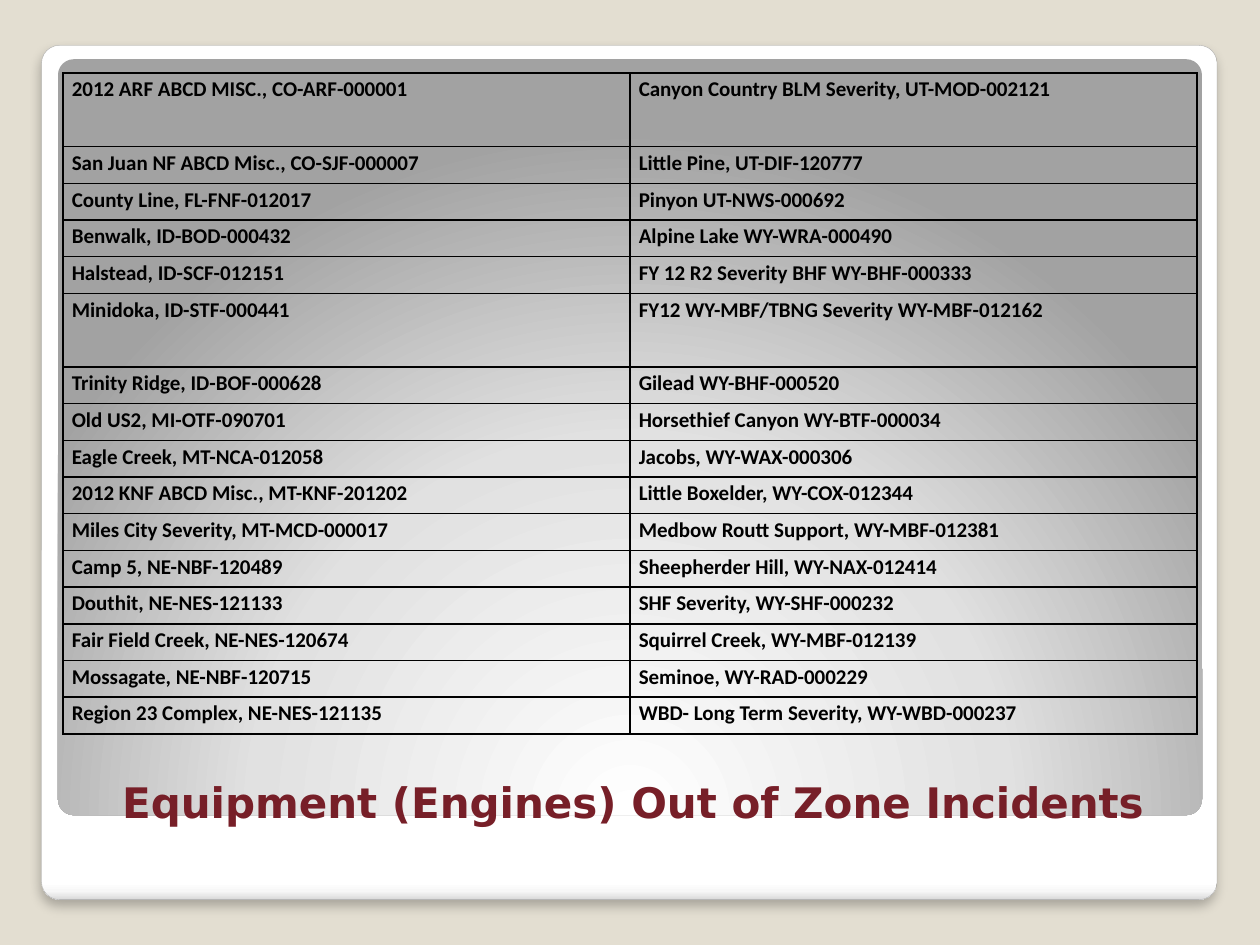
import lxml.etree
import pptx
import pptx.dml.color
import pptx.enum.shapes
import pptx.enum.text
import pptx.oxml
import pptx.oxml.ns
import pptx.util

Inches = pptx.util.Inches
Pt = pptx.util.Pt
RGBColor = pptx.dml.color.RGBColor
qn = pptx.oxml.ns.qn

BEIGE = RGBColor(0xE3, 0xDE, 0xD1)
WHITE = RGBColor(0xFF, 0xFF, 0xFF)
OFF_WHITE = RGBColor(0xF7, 0xF7, 0xF7)
PALE_GRAY = RGBColor(0xDA, 0xDA, 0xDA)
LIGHT_GRAY = RGBColor(0xE1, 0xE1, 0xE1)
MID_GRAY = RGBColor(0xA2, 0xA2, 0xA2)
EDGE_GRAY = RGBColor(0xA4, 0xA4, 0xA4)
MAROON = RGBColor(0x77, 0x1F, 0x28)
BLACK = RGBColor(0, 0, 0)

ROW_UNIT = 5.25 / 18
TALL_ROWS = (0, 5)
INCIDENTS = [
    ("2012 ARF ABCD MISC., CO-ARF-000001", "Canyon Country BLM Severity, UT-MOD-002121"),
    ("San Juan NF ABCD Misc., CO-SJF-000007", "Little Pine, UT-DIF-120777"),
    ("County Line, FL-FNF-012017", "Pinyon UT-NWS-000692"),
    ("Benwalk, ID-BOD-000432", "Alpine Lake WY-WRA-000490"),
    ("Halstead, ID-SCF-012151", "FY 12 R2 Severity BHF WY-BHF-000333"),
    ("Minidoka, ID-STF-000441", "FY12 WY-MBF/TBNG Severity WY-MBF-012162"),
    ("Trinity Ridge, ID-BOF-000628", "Gilead WY-BHF-000520"),
    ("Old US2, MI-OTF-090701", "Horsethief Canyon WY-BTF-000034"),
    ("Eagle Creek, MT-NCA-012058", "Jacobs, WY-WAX-000306"),
    ("2012 KNF ABCD Misc., MT-KNF-201202", "Little Boxelder, WY-COX-012344"),
    ("Miles City Severity, MT-MCD-000017", "Medbow Routt Support, WY-MBF-012381"),
    ("Camp 5, NE-NBF-120489", "Sheepherder Hill, WY-NAX-012414"),
    ("Douthit, NE-NES-121133", "SHF Severity, WY-SHF-000232"),
    ("Fair Field Creek, NE-NES-120674", "Squirrel Creek, WY-MBF-012139"),
    ("Mossagate, NE-NBF-120715", "Seminoe, WY-RAD-000229"),
    ("Region 23 Complex, NE-NES-121135", "WBD- Long Term Severity, WY-WBD-000237"),
]


def add_xml(parent, markup):
    """Append a DrawingML fragment to the parent element."""
    namespace = pptx.oxml.ns.nsdecls("a")
    wrapper = pptx.oxml.parse_xml(f"<a:wrap {namespace}>{markup}</a:wrap>")
    for child in list(wrapper):
        parent.append(child)


def add_card(slide, left, top, width, height, stops, direction):
    """Add a rounded card with a gradient of (percent, colour) stops."""
    card = slide.shapes.add_shape(
        pptx.enum.shapes.MSO_SHAPE.ROUNDED_RECTANGLE,
        Inches(left), Inches(top), Inches(width), Inches(height))
    card.adjustments[0] = 0.021
    card.shadow.inherit = False
    card.line.fill.background()
    card.fill.gradient()
    gradient = card.element.spPr.find(qn("a:gradFill"))
    for child in list(gradient):
        gradient.remove(child)
    marks = "".join(
        f'<a:gs pos="{percent * 1000}"><a:srgbClr val="{color}"/></a:gs>'
        for percent, color in stops)
    add_xml(gradient, f"<a:gsLst>{marks}</a:gsLst>{direction}")
    return card


def add_frame(slide, left, top, width, height):
    """Add the white outer card with its shadow and the gray panel inside it."""
    outer = add_card(
        slide, left, top, width, height,
        [(0, WHITE), (98, WHITE), (99, OFF_WHITE), (100, PALE_GRAY)],
        '<a:lin ang="5400000" scaled="0"/>')
    outer.line.color.rgb = EDGE_GRAY
    outer.line.width = Pt(0.16)
    add_xml(
        outer.element.spPr.find(qn("a:effectLst")),
        f'<a:outerShdw blurRad="{Pt(6)}" dist="{Pt(4)}" dir="5400000" rotWithShape="0">'
        f'<a:srgbClr val="{BLACK}"><a:alpha val="25000"/></a:srgbClr></a:outerShdw>')
    add_card(
        slide, left + 0.13, top + 0.11, width - 0.25, 6,
        [(0, WHITE), (55, LIGHT_GRAY), (100, MID_GRAY)],
        '<a:path path="circle">'
        '<a:fillToRect l="50000" t="175000" r="50000" b="-75000"/></a:path>')


def add_title(slide, left, top, width, height):
    """Add the slide title at the bottom of its box."""
    title = slide.shapes.add_textbox(
        Inches(left), Inches(top), Inches(width), Inches(height)).text_frame
    title.word_wrap = True
    title.vertical_anchor = pptx.enum.text.MSO_ANCHOR.BOTTOM
    heading = title.paragraphs[0]
    heading.text = "Equipment (Engines) Out of Zone Incidents"
    heading.alignment = pptx.enum.text.PP_ALIGN.CENTER
    heading.font.name = "DejaVu Sans"
    heading.font.size = Pt(24)
    heading.font.bold = True
    heading.font.color.rgb = MAROON


def fill_cell(cell, incident):
    """Write one incident in a transparent cell with black borders."""
    cell.margin_left = cell.margin_right = Inches(0.07)
    cell.margin_top = cell.margin_bottom = 0
    for side in ("lnL", "lnR", "lnT", "lnB"):
        add_xml(
            cell._tc.get_or_add_tcPr(),
            f'<a:{side} w="{Pt(1)}"><a:solidFill><a:srgbClr val="{BLACK}"/>'
            f"</a:solidFill></a:{side}>")
    cell.fill.background()
    entry = cell.text_frame.paragraphs[0]
    entry.text = incident
    entry.line_spacing = 1.15
    entry.font.name = "Calibri"
    entry.font.size = Pt(12)
    entry.font.bold = True
    entry.font.color.rgb = BLACK


def add_incident_table(slide, left, top, width, height):
    """Add the two-column table of incidents."""
    table = slide.shapes.add_table(
        len(INCIDENTS), 2,
        Inches(left), Inches(top), Inches(width), Inches(height)).table
    table.first_row = table.horz_banding = False
    for column in table.columns:
        column.width = Inches(width / 2)
    for index, incidents in enumerate(INCIDENTS):
        units = 2 if index in TALL_ROWS else 1
        table.rows[index].height = Inches(ROW_UNIT * units)
        for cell, incident in zip(table.rows[index].cells, incidents):
            fill_cell(cell, incident)


def main():
    """Build and save the presentation."""
    deck = pptx.Presentation()
    deck.slide_width, deck.slide_height = Inches(10), Inches(7.5)
    slide = deck.slides.add_slide(deck.slide_layouts[6])
    slide.background.fill.solid()
    slide.background.fill.fore_color.rgb = BEIGE
    add_frame(slide, 0.33, 0.36, 9.33, 6.78)
    add_title(slide, 0.55, 5.92, 8.95, 0.69)
    add_incident_table(slide, 0.5, 0.58, 9, 5.25)
    deck.save("out.pptx")


if __name__ == "__main__":
    main()
